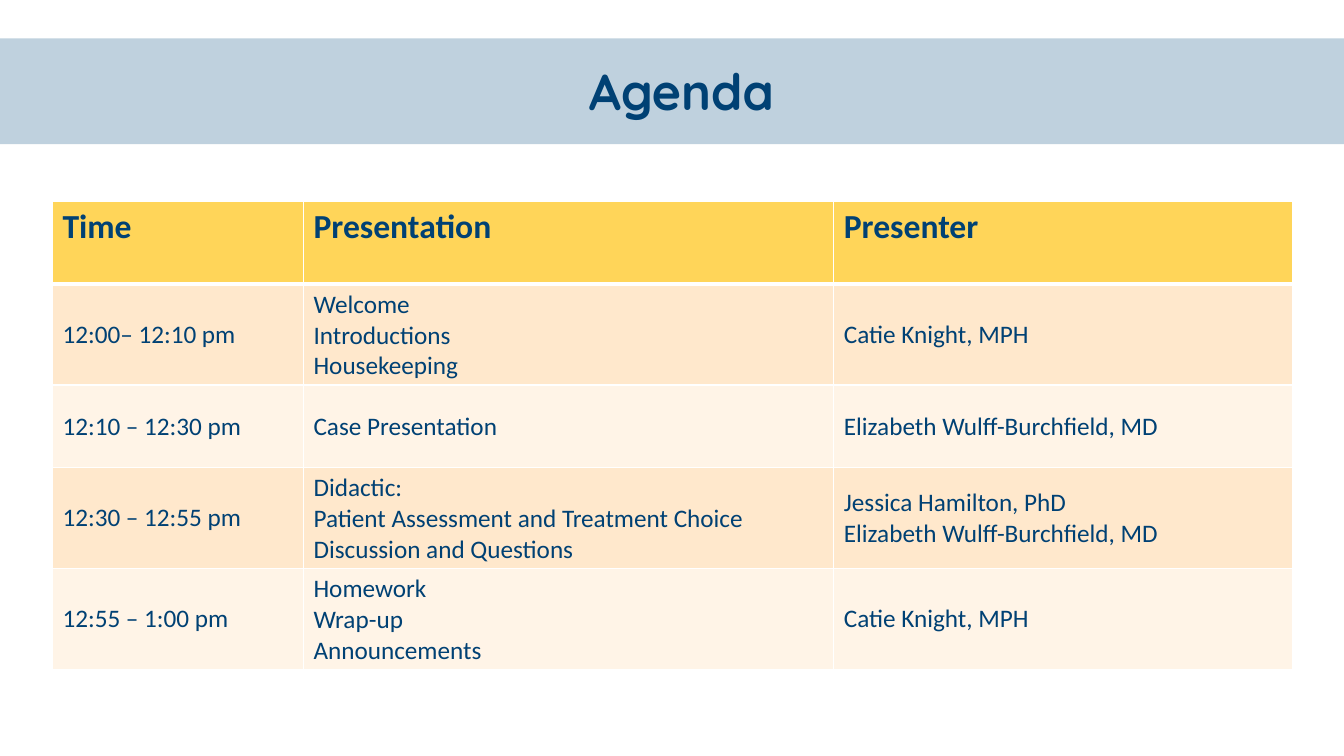
from dataclasses import dataclass

from lxml.etree import SubElement
from pptx import Presentation
from pptx.dml.color import RGBColor
from pptx.enum.shapes import MSO_SHAPE
from pptx.enum.text import MSO_ANCHOR, MSO_AUTO_SIZE, PP_ALIGN
from pptx.oxml.ns import qn
from pptx.util import Pt

PX = 9144  # EMU per px, 100 px to the inch


@dataclass(frozen=True)
class Theme:
    navy: str = "004174"
    band: str = "00497F"
    band_alpha: int = 25
    header: str = "FFC000"
    header_alpha: int = 65
    rows: tuple = ("FFE8CC", "FFF4E7")
    border: str = "FFFFFF"
    title_font: str = "Quicksand"
    body_font: str = "Calibri"
    title_size: int = 36
    header_size: int = 24
    body_size: int = 18


THEME = Theme()
HEADINGS = ("Time", "Presentation", "Presenter")
SESSIONS = (
    ("12:00– 12:10 pm", "Welcome\nIntroductions\nHousekeeping", "Catie Knight, MPH"),
    ("12:10 – 12:30 pm", "Case Presentation", "Elizabeth Wulff-Burchfield, MD"),
    ("12:30 – 12:55 pm",
     "Didactic:\nPatient Assessment and Treatment Choice\nDiscussion and Questions",
     "Jessica Hamilton, PhD\nElizabeth Wulff-Burchfield, MD"),
    ("12:55 – 1:00 pm", "Homework\nWrap-up\nAnnouncements", "Catie Knight, MPH"),
)
COLUMN_WIDTHS = (249, 526, 455)
ROW_HEIGHT = 82


def px(*lengths):
    return [length * PX for length in lengths]


def set_fill(fill, color, alpha=100):
    fill.solid()
    fill.fore_color.rgb = RGBColor.from_string(color)
    if alpha < 100:
        clr = fill._xPr.find(qn("a:solidFill"))[0]
        SubElement(clr, qn("a:alpha"), val=str(alpha * 1000))


def style_text(tf, font, size, bold):
    for p in tf.paragraphs:
        p.alignment = PP_ALIGN.LEFT
        for r in p.runs:
            r.font.name = font
            r.font.size = Pt(size)
            r.font.bold = bold
            r.font.color.rgb = RGBColor.from_string(THEME.navy)


def add_band(slide, box):
    sp = slide.shapes.add_shape(MSO_SHAPE.RECTANGLE, *px(*box))
    sp.shadow.inherit = False
    set_fill(sp.fill, THEME.band, THEME.band_alpha)
    sp.line.fill.background()


def set_title(slide, text, box):
    title = slide.shapes.title
    title.left, title.top, title.width, title.height = px(*box)
    tf = title.text_frame
    tf.text = text
    tf.word_wrap = False
    tf.auto_size = MSO_AUTO_SIZE.SHAPE_TO_FIT_TEXT
    tf.vertical_anchor = MSO_ANCHOR.TOP
    style_text(tf, THEME.title_font, THEME.title_size, True)
    # Bring the title in front of the band
    slide.shapes._spTree.append(title._element)


def set_borders(cell, top, bottom):
    tcPr = cell._tc.get_or_add_tcPr()
    for side, width in (("L", 1), ("R", 1), ("T", top), ("B", bottom)):
        ln = SubElement(tcPr, qn(f"a:ln{side}"), w=str(Pt(width)))
        SubElement(SubElement(ln, qn("a:solidFill")), qn("a:srgbClr"), val=THEME.border)


def fill_cell(cell, text, row):
    header = row == 0
    # Heavier rule between the header and the first session
    set_borders(cell, top=3 if row == 1 else 1, bottom=3 if header else 1)
    cell.text_frame.text = text
    if header:
        set_fill(cell.fill, THEME.header, THEME.header_alpha)
        cell.vertical_anchor = MSO_ANCHOR.TOP
        size = THEME.header_size
    else:
        set_fill(cell.fill, THEME.rows[(row - 1) % 2])
        cell.vertical_anchor = MSO_ANCHOR.MIDDLE
        size = THEME.body_size
    style_text(cell.text_frame, THEME.body_font, size, header)


def add_agenda(slide, left, top):
    records = (HEADINGS, *SESSIONS)
    box = px(left, top, sum(COLUMN_WIDTHS), ROW_HEIGHT * len(records))
    table = slide.shapes.add_table(len(records), len(HEADINGS), *box).table
    for column, width in zip(table.columns, px(*COLUMN_WIDTHS)):
        column.width = width
    for i, record in enumerate(records):
        table.rows[i].height = ROW_HEIGHT * PX
        for j, text in enumerate(record):
            fill_cell(table.cell(i, j), text, i)


def main():
    prs = Presentation()
    prs.slide_width, prs.slide_height = px(1333, 750)
    slide = prs.slides.add_slide(prs.slide_layouts[5])

    # Title band
    add_band(slide, (0, 38, 1333, 105))
    set_title(slide, "Agenda", (574, 55, 222, 71))

    # Schedule
    add_agenda(slide, 52, 200)
    prs.save("out.pptx")


if __name__ == "__main__":
    main()
